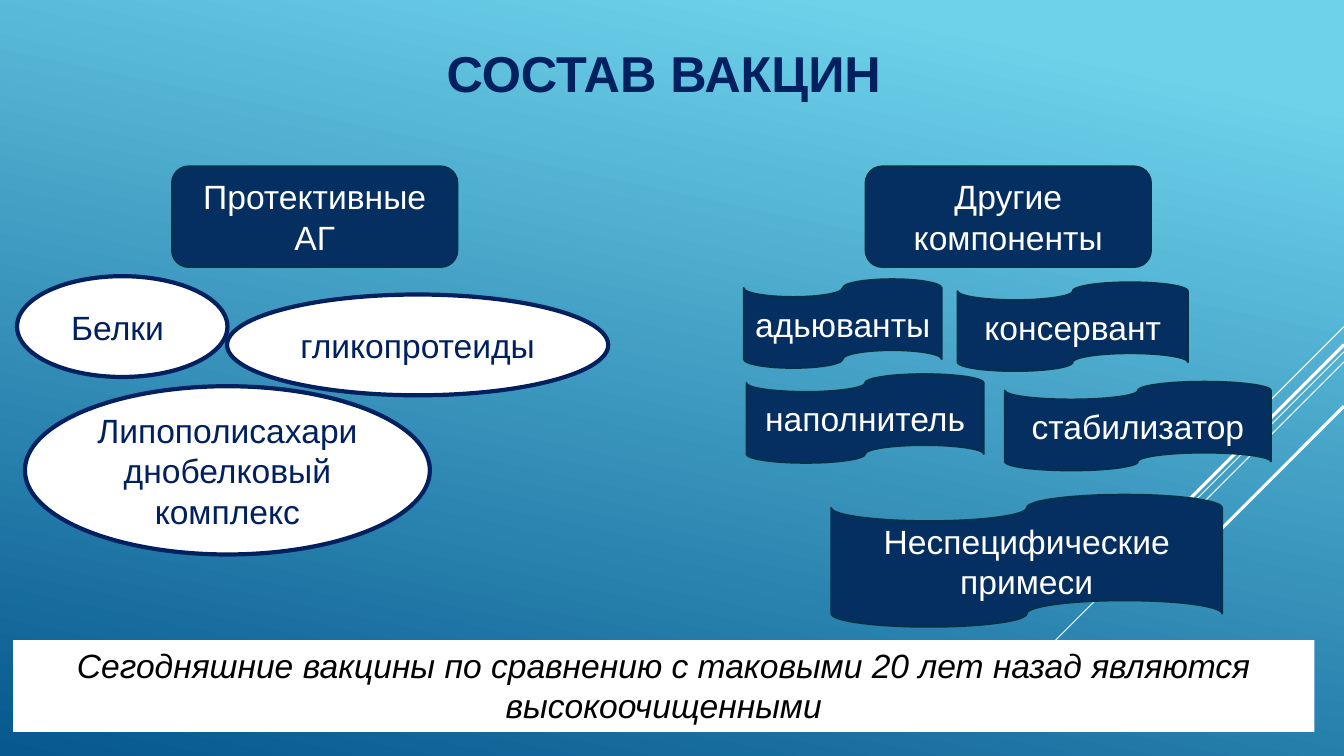
import pptx
import pptx.util
import pptx.dml.color
import pptx.enum.shapes
import pptx.enum.text
from lxml import etree

Pt = pptx.util.Pt
Shape = pptx.enum.shapes.MSO_SHAPE
Anchor = pptx.enum.text.MSO_ANCHOR

# Content: boxes are left, top, width, height in points
SLIDE_WIDTH, SLIDE_HEIGHT = 960, 540
FONT = "Arial"
GRADIENT = [(0.1, "6ED2EB"), (1, "06588E")]
GRADIENT_ANGLE = 258
TITLE = ("СОСТАВ ВАКЦИН", (196, 9.5, 556.5, 85))
CONCLUSION = (
    "Сегодняшние вакцины по сравнению с таковыми 20 лет назад являются высокоочищенными",
    (9.3, 457.2, 929.5, 65.5),
)

# Diagonal rays from the right edge: start height, horizontal run, line width
RAYS = [
    (233.3, 72, 0.75),
    (251.3, 234.7, 0.75),
    (258.5, 149, 0.75),
    (246.2, 137.5, 2.25),
    (290.2, 100, 2.25),
]

# Styles: preset, fill, line colour, line width, text colour
HEADING = (Shape.ROUNDED_RECTANGLE, "052F61", "043148", 1.25, "FFFFFF")
ANTIGEN = (Shape.OVAL, "FFFFFF", "002060", 3, "002060")
COMPONENT = (Shape.FLOWCHART_PUNCHED_TAPE, "052F61", "043148", 1.25, "FFFFFF")

GROUPS = [
    (HEADING, [
        ("Протективные АГ", (122.8, 118.8, 204, 72)),
        ("Другие компоненты", (618.2, 118.8, 204, 72)),
    ]),
    (ANTIGEN, [
        ("Белки ", (12.2, 197.3, 150.3, 72)),
        ("гликопротеиды", (162.2, 210.4, 272.3, 72)),
        ("Липополисахариднобелковый комплекс", (17.8, 275.9, 289.3, 120.2)),
    ]),
    (COMPONENT, [
        ("адьюванты", (531.2, 199.4, 141.5, 63.5)),
        ("консервант", (684, 201.6, 164.5, 63.5)),
        ("наполнитель", (533.2, 267.2, 169.5, 63.5)),
        ("стабилизатор", (717.8, 272.6, 190.1, 63.5)),
        ("Неспецифические примеси", (593.8, 353.3, 279.2, 94.5)),
    ]),
]


def color(hex_string):
    return pptx.dml.color.RGBColor.from_string(hex_string)


def write(shape, text, size, text_color, anchor, bold=False, italic=False):
    frame = shape.text_frame
    frame.word_wrap = True
    frame.vertical_anchor = anchor
    paragraph = frame.paragraphs[0]
    paragraph.text = text
    paragraph.alignment = pptx.enum.text.PP_ALIGN.CENTER
    font = paragraph.font
    font.name, font.size = FONT, Pt(size)
    font.bold, font.italic = bold, italic
    font.color.rgb = color(text_color)


def add_filled(slide, preset, box, fill):
    shape = slide.shapes.add_shape(preset, *map(Pt, box))
    shape.shadow.inherit = False
    shape.fill.solid()
    shape.fill.fore_color.rgb = color(fill)
    return shape


def add_ray(slide, top, run, width):
    # Every ray falls at 45 degrees, so run equals drop
    ray = slide.shapes.add_connector(
        pptx.enum.shapes.MSO_CONNECTOR.STRAIGHT,
        Pt(SLIDE_WIDTH), Pt(top), Pt(SLIDE_WIDTH - run), Pt(top + run))
    ray.line.color.rgb = color("FFFFFF")
    ray.line.width = Pt(width)
    etree.SubElement(ray._element.spPr, pptx.oxml.ns.qn("a:effectLst"))


def main():
    presentation = pptx.Presentation()
    presentation.slide_width = Pt(SLIDE_WIDTH)
    presentation.slide_height = Pt(SLIDE_HEIGHT)
    slide = presentation.slides.add_slide(presentation.slide_layouts[6])

    # Background
    background = slide.background.fill
    background.gradient()
    background.gradient_angle = GRADIENT_ANGLE
    for stop, (position, stop_color) in zip(background.gradient_stops, GRADIENT):
        stop.position = position
        stop.color.rgb = color(stop_color)
    for ray in RAYS:
        add_ray(slide, *ray)

    # Title
    text, box = TITLE
    title = slide.shapes.add_textbox(*map(Pt, box))
    write(title, text, 36, "002060", Anchor.MIDDLE, bold=True)

    # Headings, antigens and components
    for (preset, fill, line, width, text_color), items in GROUPS:
        for text, box in items:
            shape = add_filled(slide, preset, box, fill)
            shape.line.color.rgb = color(line)
            shape.line.width = Pt(width)
            write(shape, text, 24, text_color, Anchor.MIDDLE)

    # Conclusion
    text, box = CONCLUSION
    banner = add_filled(slide, Shape.RECTANGLE, box, "FFFFFF")
    banner.line.fill.background()
    write(banner, text, 24, "000000", Anchor.TOP, italic=True)

    presentation.save("out.pptx")


if __name__ == "__main__":
    main()
